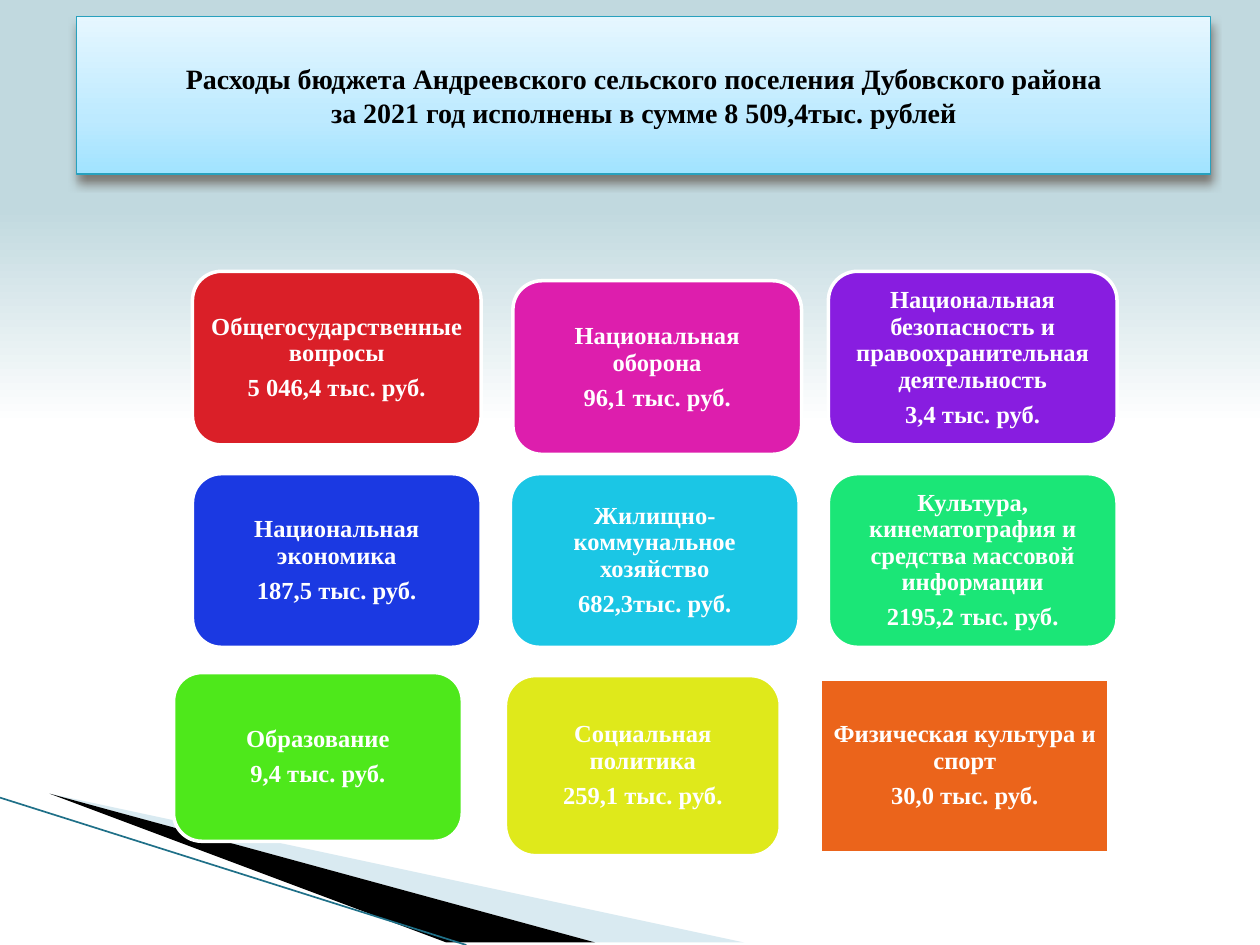
from lxml.etree import SubElement
from pptx import Presentation
from pptx.dml.color import RGBColor
from pptx.enum.shapes import MSO_CONNECTOR, MSO_SHAPE
from pptx.enum.text import MSO_ANCHOR, PP_ALIGN
from pptx.oxml.ns import qn
from pptx.util import Cm, Pt

TITLE = [
    "Расходы бюджета Андреевского сельского поселения Дубовского района",
    "за 2021 год исполнены в сумме 8 509,4тыс. рублей",
]
CARD_WIDTH, CARD_HEIGHT = 5.82, 3.5
COLUMNS = [3.88, 10.29, 16.7]
ROWS = [5.47, 9.55]
ROUNDED = MSO_SHAPE.FLOWCHART_ALTERNATE_PROCESS
GRID_CARDS = [
    ("Общегосударственные вопросы", "5 046,4 тыс. руб.", "DA1F28"),
    ("Национальная оборона", "96,1 тыс. руб.", "DD1EAD"),
    ("Национальная безопасность и правоохранительная деятельность",
     "3,4 тыс. руб.", "881DE0"),
    ("Национальная экономика", "187,5 тыс. руб.", "1B39E2"),
    ("Жилищно-коммунальное хозяйство", "682,3тыс. руб.", "1BC6E5"),
    ("Культура, кинематография и средства массовой информации",
     "2195,2 тыс. руб.", "1BE677"),
]
SHIFTS = {1: (0.05, 0.19)}
BOTTOM_CARDS = [
    ("Образование", "9,4 тыс. руб.", "4EE81B",
     (3.5, 13.56, CARD_WIDTH, 3.4), MSO_SHAPE.ROUNDED_RECTANGLE),
    ("Социальная политика", "259,1 тыс. руб.", "DFE91B",
     (10.19, 13.62, 5.54, 3.63), ROUNDED),
    ("Физическая культура и спорт", "30,0 тыс. руб.", "EB641B",
     (16.54, 13.69, CARD_WIDTH, CARD_HEIGHT), MSO_SHAPE.RECTANGLE),
]


def color(value):
    return RGBColor.from_string(value)


class BudgetSlide:
    font_name = "Times New Roman"

    def __init__(self, slide):
        self.slide = slide

    def gradient(self, fill, element, stops):
        fill.gradient()
        fill.gradient_angle = 90
        stop_list = next(element.iter(qn("a:gsLst")))
        for stop in list(stop_list):
            stop_list.remove(stop)
        for position, value in stops:
            stop = SubElement(stop_list, qn("a:gs"), pos=str(position * 1000))
            SubElement(stop, qn("a:srgbClr"), val=value)

    def background(self, stops):
        self.gradient(self.slide.background.fill, self.slide.element, stops)

    def wedge(self, points, fill, opacity=100):
        builder = self.slide.shapes.build_freeform(*points[0], scale=Cm(1))
        builder.add_line_segments(points[1:])
        shape = builder.convert_to_shape()
        shape.shadow.inherit = False
        shape.fill.solid()
        shape.fill.fore_color.rgb = color(fill)
        shape.line.fill.background()
        if opacity < 100:
            fill_color = next(shape.element.spPr.iter(qn("a:srgbClr")))
            SubElement(fill_color, qn("a:alpha"), val=str(opacity * 1000))

    def line(self, start, end, value, width):
        connector = self.slide.shapes.add_connector(
            MSO_CONNECTOR.STRAIGHT, *map(Cm, start + end))
        connector.line.color.rgb = color(value)
        connector.line.width = Pt(width)
        SubElement(connector.element.spPr, qn("a:effectLst"))

    def box(self, kind, bounds, line, width):
        shape = self.slide.shapes.add_shape(kind, *map(Cm, bounds))
        shape.shadow.inherit = False
        shape.line.color.rgb = color(line)
        shape.line.width = Pt(width)
        shape.text_frame.word_wrap = True
        shape.text_frame.vertical_anchor = MSO_ANCHOR.MIDDLE
        return shape

    def run(self, paragraph, text, size, value):
        paragraph.alignment = PP_ALIGN.CENTER
        run = paragraph.add_run()
        run.text = text
        run.font.name = self.font_name
        run.font.size = Pt(size)
        run.font.bold = True
        run.font.color.rgb = color(value)

    def title(self, lines, bounds):
        shape = self.box(MSO_SHAPE.RECTANGLE, bounds, "28A1BE", 0.75)
        self.gradient(shape.fill, shape.element,
                      [(0, "A1E3FF"), (35, "BDEAFF"), (100, "E6F7FF")])
        effects = shape.element.spPr.find(qn("a:effectLst"))
        shadow = SubElement(effects, qn("a:outerShdw"), blurRad=str(Pt(6)),
                            dist=str(Pt(4)), dir="5400000", rotWithShape="0")
        shade = SubElement(shadow, qn("a:srgbClr"), val="4E3B30")
        SubElement(shade, qn("a:alpha"), val="60000")
        paragraph = shape.text_frame.paragraphs[0]
        for index, text in enumerate(lines):
            if index:
                paragraph.add_line_break()
            self.run(paragraph, text, 16, "000000")

    def card(self, name, amount, fill, bounds, kind=ROUNDED):
        shape = self.box(kind, bounds, "FFFFFF", 2)
        shape.fill.solid()
        shape.fill.fore_color.rgb = color(fill)
        frame = shape.text_frame
        frame.margin_left = frame.margin_right = Cm(0.15)
        frame.margin_top = frame.margin_bottom = Cm(0.15)
        for index, text in enumerate((name, amount)):
            paragraph = frame.add_paragraph() if index else frame.paragraphs[0]
            paragraph.line_spacing = 0.9
            paragraph.space_after = Pt(5)
            self.run(paragraph, text, 14, "FFFFFF")


def main():
    presentation = Presentation()
    presentation.slide_width = Cm(25.4)
    presentation.slide_height = Cm(19.05)
    budget = BudgetSlide(
        presentation.slides.add_slide(presentation.slide_layouts[6]))
    budget.background([(0, "FFFFFF"), (55, "FFFFFF"),
                       (78, "C1D9DF"), (100, "C1D9DF")])
    budget.wedge([(1.4, 16.5), (15.1, 19.05), (11.58, 19.05)], "A0CBDC", 40)
    budget.wedge([(1.35, 16.48), (11.58, 19.05), (9.4, 19.05)], "000000")
    budget.line((0, 16.08), (9.4, 19.05), "1F7088", 0.95)
    budget.title(TITLE, (1.55, 0.33, 22.86, 3.18))
    for index, (name, amount, fill) in enumerate(GRID_CARDS):
        row, column = divmod(index, len(COLUMNS))
        shift_x, shift_y = SHIFTS.get(index, (0, 0))
        budget.card(name, amount, fill,
                    (COLUMNS[column] + shift_x, ROWS[row] + shift_y,
                     CARD_WIDTH, CARD_HEIGHT))
    for card in BOTTOM_CARDS:
        budget.card(*card)
    presentation.save("out.pptx")


if __name__ == "__main__":
    main()
